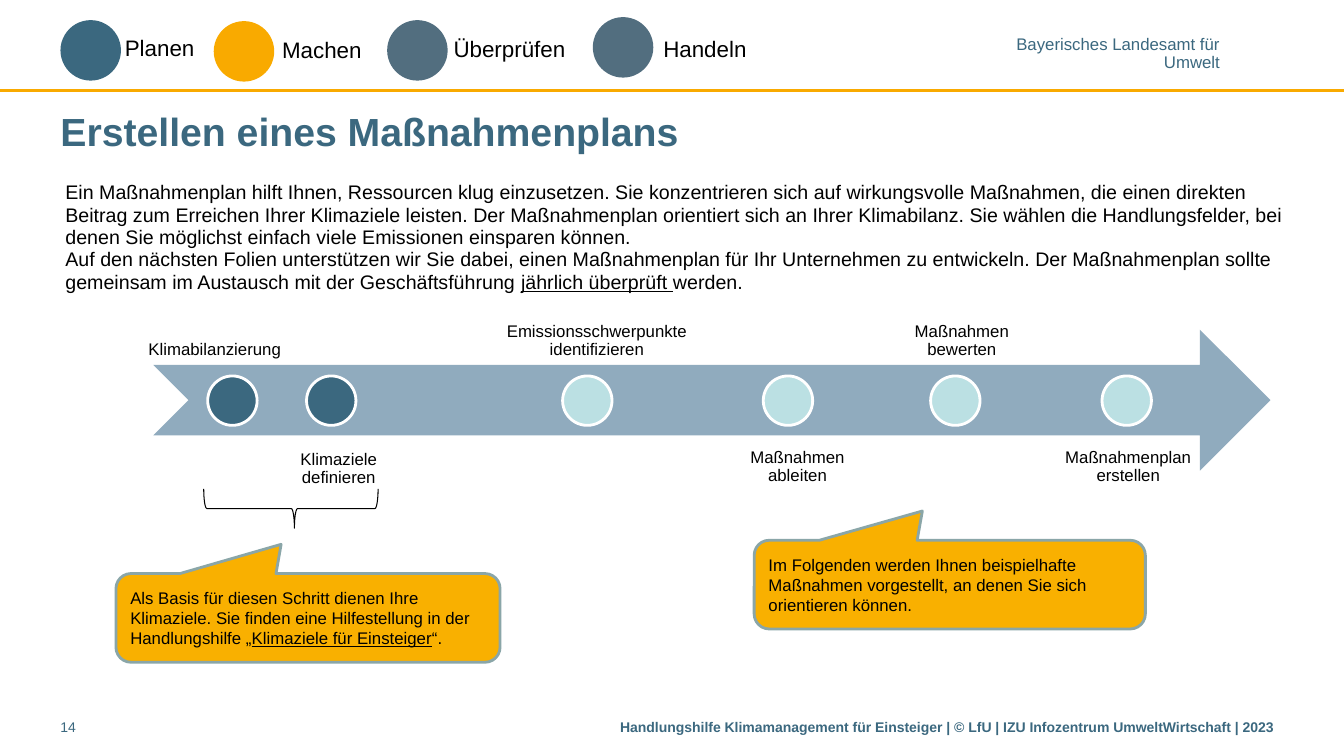
from pptx import Presentation
from pptx.dml.color import RGBColor
from pptx.enum.shapes import MSO_CONNECTOR, MSO_SHAPE
from pptx.enum.text import MSO_ANCHOR, PP_ALIGN
from pptx.oxml.ns import qn
from pptx.util import Inches, Pt

BLUE, GREY, ORANGE, MINT = "3B687F", "526E7F", "F9AA00", "BBE0E3"
AMBER, SAGE, STEEL = "F9B000", "8AA6A8", "90ABBE"

TITLE = "Erstellen eines Maßnahmenplans"
AGENCY = [["Bayerisches Landesamt für"], ["Umwelt"]]
FOOTER = "Handlungshilfe Klimamanagement für Einsteiger | © LfU | IZU Infozentrum UmweltWirtschaft | 2023"
PAGE_NUMBER = "14"

# name, circle left, circle top, colour, label left, label top, label width
PHASES = [
    ("Planen", 0.6, 0.2, BLUE, 1.14, 0.29, 1.67),
    ("Machen", 2.12, 0.21, ORANGE, 2.7, 0.31, 1.03),
    ("Überprüfen", 3.84, 0.2, GREY, 4.4, 0.3, 1.37),
    ("Handeln", 5.88, 0.17, GREY, 6.48, 0.3, 2.95),
]
INTRO = [
    ["Ein Maßnahmenplan hilft Ihnen, Ressourcen klug einzusetzen. Sie konzentrieren sich auf "
     "wirkungsvolle Maßnahmen, die einen direkten Beitrag zum Erreichen Ihrer Klimaziele leisten. "
     "Der Maßnahmenplan orientiert sich an Ihrer Klimabilanz. Sie wählen die Handlungsfelder, bei "
     "denen Sie möglichst einfach viele Emissionen einsparen können."],
    ["Auf den nächsten Folien unterstützen wir Sie dabei, einen Maßnahmenplan für Ihr Unternehmen "
     "zu entwickeln. Der Maßnahmenplan sollte gemeinsam im Austausch mit der Geschäftsführung ",
     ("jährlich überprüft ",), "werden."],
]
# text, dot left, dot colour, label centre, label width, label top, anchor
ABOVE, BELOW = (1.7, MSO_ANCHOR.BOTTOM), (4.36, MSO_ANCHOR.TOP)
STEPS = [
    ("Klimabilanzierung", 2.06, BLUE, 2.13, 1.58, *ABOVE),
    ("Klimaziele definieren", 3.04, BLUE, 3.36, 1.58, 4.38, MSO_ANCHOR.TOP),
    ("Emissionsschwerpunkte identifizieren", 5.58, MINT, 5.92, 2.19, *ABOVE),
    ("Maßnahmen ableiten", 7.57, MINT, 7.91, 1.58, *BELOW),
    ("Maßnahmen bewerten", 9.23, MINT, 9.54, 1.58, *ABOVE),
    ("Maßnahmenplan erstellen", 10.93, MINT, 11.19, 1.58, *BELOW),
]
CALLOUTS = [
    ((1.15, 5.69, 3.81, 0.88),
     [["Als Basis für diesen Schritt dienen Ihre Klimaziele. Sie finden eine Hilfestellung in der "
       "Handlungshilfe „", ("Klimaziele für Einsteiger",), "“."]]),
    ((7.48, 5.36, 3.88, 0.88),
     [["Im Folgenden werden Ihnen beispielhafte Maßnahmen vorgestellt, an denen Sie sich "
       "orientieren können."]]),
]


def color(value):
    return RGBColor.from_string(value)


def write(box, text, size=12, fill="000000", bold=False, align=PP_ALIGN.LEFT,
          anchor=MSO_ANCHOR.TOP, spacing=None, insets=(0.1, 0.05), wrap=True):
    frame = box.text_frame
    frame.word_wrap = wrap
    frame.vertical_anchor = anchor
    frame.margin_left = frame.margin_right = Inches(insets[0])
    frame.margin_top = frame.margin_bottom = Inches(insets[1])
    paragraphs = [[text]] if isinstance(text, str) else text
    for index, spans in enumerate(paragraphs):
        para = frame.add_paragraph() if index else frame.paragraphs[0]
        para.alignment = align
        para.line_spacing = spacing
        for content in spans:
            underlined = isinstance(content, tuple)
            span = para.add_run()
            span.text = content[0] if underlined else content
            span.font.name = "Arial"
            span.font.size = Pt(size)
            span.font.bold = bold
            span.font.underline = underlined
            span.font.color.rgb = color(fill)


def add_text(place, text, **style):
    box = page.shapes.add_textbox(*map(Inches, place))
    write(box, text, **style)


def add_shape(kind, place, fill=None, line=None, width=2, adjust=()):
    shape = page.shapes.add_shape(kind, *map(Inches, place))
    shape.shadow.inherit = False
    if fill:
        shape.fill.solid()
        shape.fill.fore_color.rgb = color(fill)
    else:
        shape.fill.background()
    if line:
        shape.line.color.rgb = color(line)
        shape.line.width = Pt(width)
    else:
        shape.line.fill.background()
    for index, value in enumerate(adjust):
        shape.adjustments[index] = value
    return shape


deck = Presentation()
deck.slide_width, deck.slide_height = Inches(13.33), Inches(7.5)
page = deck.slides.add_slide(deck.slide_layouts[5])

title = page.shapes.title
title.left, title.top, title.width, title.height = map(Inches, (0.6, 1.02, 12.31, 0.55))
write(title, TITLE, size=28, fill=BLUE, bold=True, anchor=MSO_ANCHOR.MIDDLE, insets=(0, 0.05))

rule = page.shapes.add_connector(MSO_CONNECTOR.STRAIGHT, 0, Inches(0.9), deck.slide_width, Inches(0.9))
rule.line.color.rgb = color(ORANGE)
rule.line.width = Pt(2)
properties = rule._element.spPr
properties.append(properties.makeelement(qn("a:effectLst"), {}))

add_text((10.07, 0.37, 2.03, 0.34), AGENCY, fill=BLUE, align=PP_ALIGN.RIGHT,
         spacing=0.85, insets=(0, 0), wrap=False)
for name, left, top, fill, label_left, label_top, label_width in PHASES:
    add_shape(MSO_SHAPE.OVAL, (left, top, 0.6, 0.6), fill)
    add_text((label_left, label_top, label_width, 0.37), name, size=16)

add_text((0.55, 1.75, 12.39, 1.22), INTRO, size=14, spacing=Pt(16))

add_shape(MSO_SHAPE.NOTCHED_RIGHT_ARROW, (1.52, 3.27, 11.08, 1.4), STEEL)
for name, dot_left, fill, center, width, top, anchor in STEPS:
    add_text((center - width / 2, top, width, 1.95), name, align=PP_ALIGN.CENTER,
             anchor=anchor, spacing=0.9, insets=(0.09, 0.09))
    add_shape(MSO_SHAPE.OVAL, (dot_left, 3.73, 0.49, 0.49), fill, "FFFFFF")

brace = add_shape(MSO_SHAPE.RIGHT_BRACE, (2.69, 4.18, 0.39, 1.73), line="000000",
                  width=0.75, adjust=(0.08, 0.48))
brace.rotation = 90

for place, text in CALLOUTS:
    callout = add_shape(MSO_SHAPE.ROUNDED_RECTANGULAR_CALLOUT, place, AMBER, SAGE,
                        adjust=(-0.07, -0.83, 0.17))
    write(callout, text, anchor=MSO_ANCHOR.MIDDLE)

add_text((0.6, 7.08, 0.7, 0.31), PAGE_NUMBER, size=10, fill=BLUE, insets=(0, 0.05))
add_text((6.15, 7.08, 6.76, 0.31), FOOTER, size=10, fill=BLUE, bold=True, insets=(0, 0.05))

deck.save("out.pptx")
